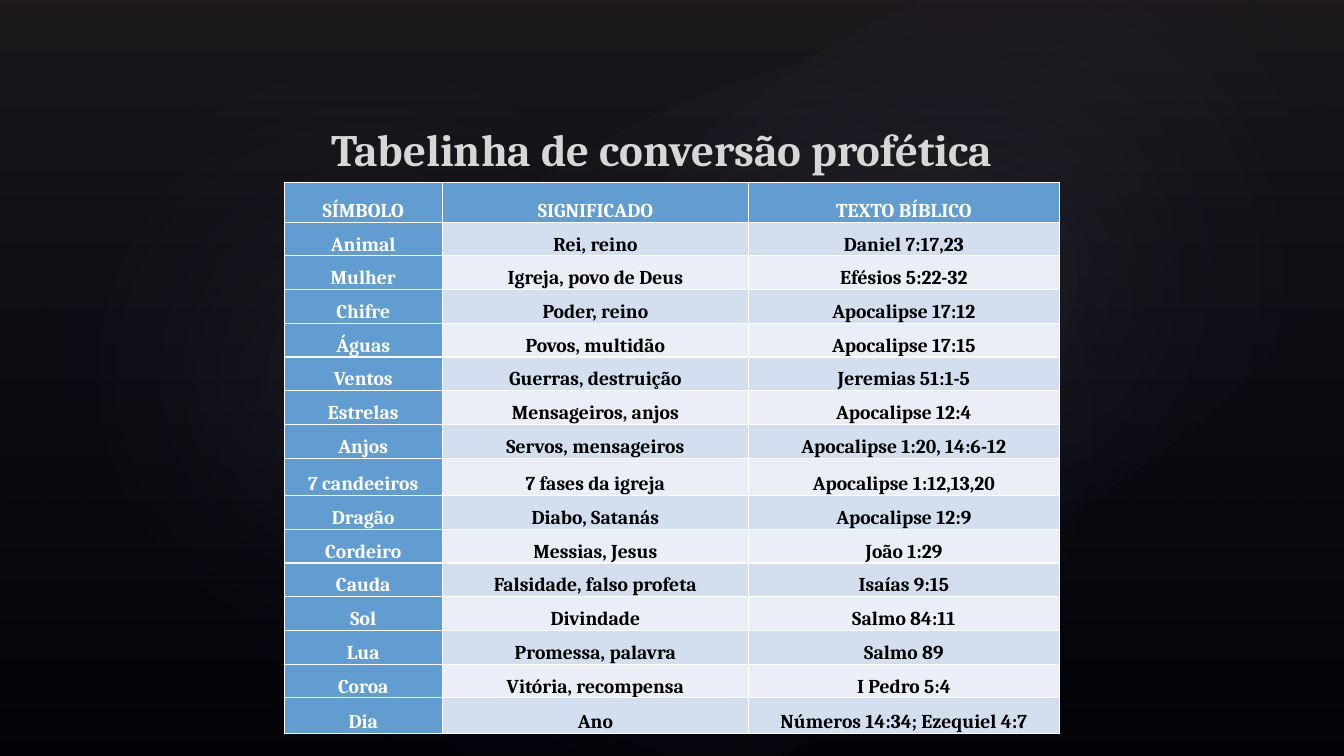
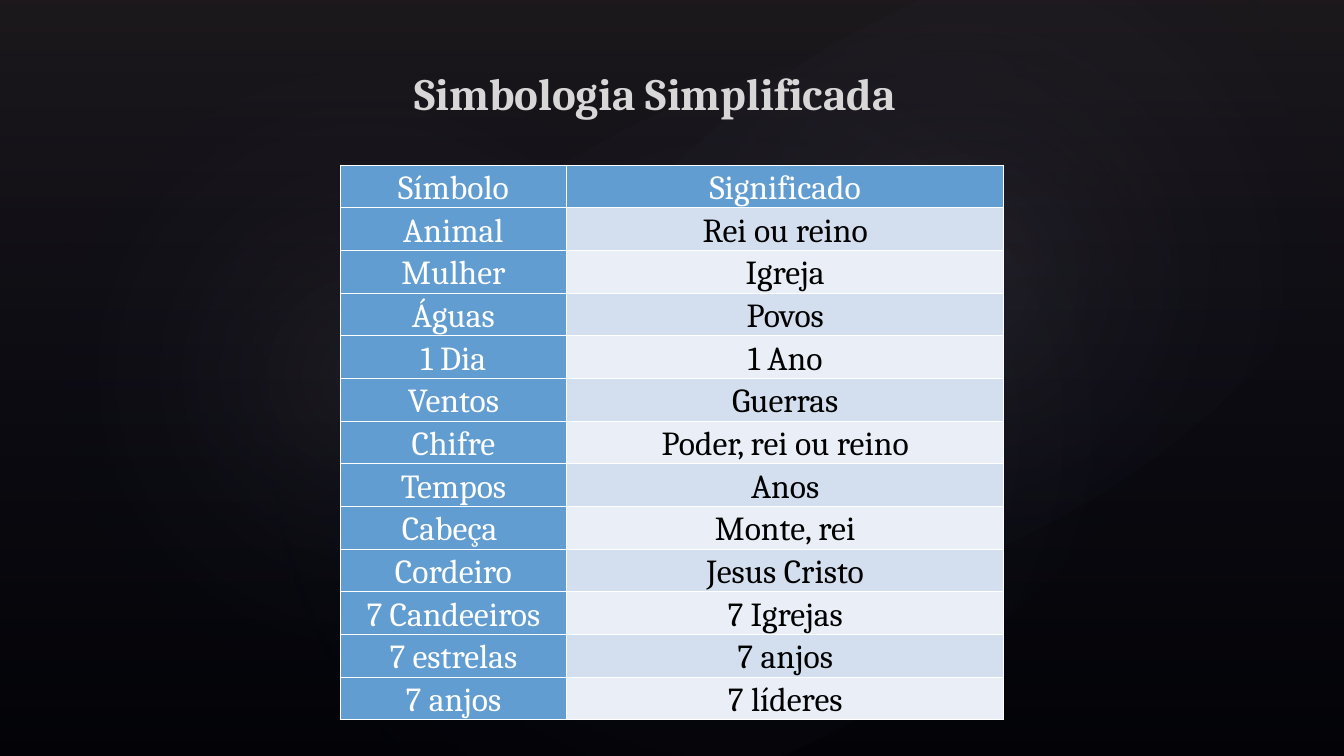
"""Build two dark slides with tables of prophetic symbols."""
from pptx import Presentation
from pptx.dml.color import RGBColor
from pptx.enum.shapes import MSO_SHAPE
from pptx.enum.text import MSO_ANCHOR, PP_ALIGN
from pptx.oxml import parse_xml
from pptx.oxml.ns import nsdecls
from pptx.util import Pt

HUES = {
    "back": "000000", "text": "000000", "white": "FFFFFF",
    "head": "629DD1", "odd": "D3DFEE", "even": "EAEFF7",
    "haze": "504652", "navy": "242852", "glow": "C4BCC6",
    "dim": "979797", "pale": "D7D7D7",
}
FONT = "Cambria"
DOWN = '<a:lin ang="5400000" scaled="0"/>'
ROUND = ('<a:path path="circle"><a:fillToRect l="50000" t="50000" '
         'r="50000" b="50000"/></a:path>')


def rgb(name):
    return RGBColor.from_string(HUES[name])


def blend(stops, way):
    marks = "".join(
        f'<a:gs pos="{pos * 1000}"><a:srgbClr val="{HUES[name]}">'
        f'<a:alpha val="{alpha * 1000}"/></a:srgbClr></a:gs>'
        for pos, name, alpha in stops)
    return parse_xml(f'<a:gradFill {nsdecls("a")} rotWithShape="1">'
                     f'<a:gsLst>{marks}</a:gsLst>{way}</a:gradFill>')


deck = Presentation()
deck.slide_width, deck.slide_height = Pt(960), Pt(540)
blank = deck.slide_layouts[6]
for holder in list(blank.placeholders):
    holder.element.getparent().remove(holder.element)
blank.background.fill.solid()
blank.background.fill.fore_color.rgb = rgb("back")

PAGES = [
    {
        "title": "Tabelinha de conversão profética",
        "place": (229.7, 83.5, 500, 68),
        "left": 203, "top": 130.3, "size": 14, "bold": True, "inset": 3.6,
        "cols": [113, 218.7, 222],
        "high": [28.4] + [24.1] * 7 + [26.6] + [24.1] * 6 + [25.5],
        "rows": [
            ("SÍMBOLO", "SIGNIFICADO", "TEXTO BÍBLICO"),
            ("Animal", "Rei, reino", "Daniel 7:17,23"),
            ("Mulher", "Igreja, povo de Deus", "Efésios 5:22-32"),
            ("Chifre", "Poder, reino", "Apocalipse 17:12"),
            ("Águas", "Povos, multidão", "Apocalipse 17:15"),
            ("Ventos", "Guerras, destruição", "Jeremias 51:1-5"),
            ("Estrelas", "Mensageiros, anjos", "Apocalipse 12:4"),
            ("Anjos", "Servos, mensageiros", "Apocalipse 1:20, 14:6-12"),
            ("7 candeeiros", "7 fases da igreja", "Apocalipse 1:12,13,20"),
            ("Dragão", "Diabo, Satanás", "Apocalipse 12:9"),
            ("Cordeiro", "Messias, Jesus", "João 1:29"),
            ("Cauda", "Falsidade, falso profeta", "Isaías 9:15"),
            ("Sol", "Divindade", "Salmo 84:11"),
            ("Lua", "Promessa, palavra", "Salmo 89"),
            ("Coroa", "Vitória, recompensa", "I Pedro 5:4"),
            ("Dia", "Ano", "Números 14:34; Ezequiel 4:7"),
        ],
    },
    {
        "title": "Simbologia Simplificada",
        "place": (288.7, 43.2, 383, 46),
        "left": 243, "top": 118, "size": 24, "bold": False, "inset": 2.9,
        "cols": [161.7, 312.3],
        "high": [30.5] * 13,
        "rows": [
            ("Símbolo", "Significado"),
            ("Animal", "Rei ou reino"),
            ("Mulher", "Igreja"),
            ("Águas", "Povos"),
            ("1 Dia", "1 Ano"),
            ("Ventos", "Guerras"),
            ("Chifre", "Poder, rei ou reino"),
            ("Tempos", "Anos"),
            ("Cabeça ", "Monte, rei"),
            ("Cordeiro", "Jesus Cristo"),
            ("7 Candeeiros", "7 Igrejas"),
            ("7 estrelas", "7 anjos"),
            ("7 anjos", "7 líderes"),
        ],
    },
]
slides = [deck.slides.add_slide(blank) for page in PAGES]

RECT, OVAL = MSO_SHAPE.RECTANGLE, MSO_SHAPE.OVAL
LIGHTS = [
    (RECT, (0, 0, 960, 540), 0, [(0, "haze", 36), (100, "navy", 10)], DOWN),
    (OVAL, (144, 82, 760, 449), 328.7,
     [(0, "glow", 7), (58, "navy", 0)], ROUND),
    (OVAL, (44, 33, 436, 470), 294.3,
     [(0, "glow", 8), (58, "navy", 0)], ROUND),
    (OVAL, (344, 9.4, 680, 374), 328.7,
     [(0, "glow", 8), (58, "navy", 0)], ROUND),
]
lights = []
for kind, place, turn, stops, way in LIGHTS:
    light = slides[0].shapes.add_shape(kind, *map(Pt, place))
    light.rotation = turn
    light.shadow.inherit = False
    light.line.fill.background()
    geom = light.element.xpath("p:spPr/a:prstGeom")[0]
    geom.addnext(blend(stops, way))
    lights.append(light)
for light in lights:
    blank.shapes.element.append(light.element)

for slide, page in zip(slides, PAGES):
    rows, cols = page["rows"], page["cols"]
    frame = slide.shapes.add_table(
        len(rows), len(cols), Pt(page["left"]), Pt(page["top"]),
        Pt(sum(cols)), Pt(sum(page["high"])))
    table = frame.table
    for col, width in zip(table.columns, cols):
        col.width = Pt(width)
    for y, texts in enumerate(rows):
        table.rows[y].height = Pt(page["high"][y])
        for x, text in enumerate(texts):
            cell = table.cell(y, x)
            head = x == 0 or y == 0
            cell.fill.solid()
            cell.fill.fore_color.rgb = rgb(
                "head" if head else "odd" if y % 2 else "even")
            cell.vertical_anchor = MSO_ANCHOR.BOTTOM
            cell.margin_left = cell.margin_right = Pt(page["inset"])
            cell.margin_top = cell.margin_bottom = 0
            para = cell.text_frame.paragraphs[0]
            para.alignment = PP_ALIGN.CENTER
            run = para.add_run()
            run.text = text
            run.font.name, run.font.size = FONT, Pt(page["size"])
            run.font.bold = page["bold"]
            run.font.color.rgb = rgb("white" if head else "text")
    for props in frame.element.xpath(".//a:tcPr"):
        for spot, side in enumerate("LRTB"):
            props.insert(spot, parse_xml(
                f'<a:ln{side} {nsdecls("a")} w="12700"><a:solidFill>'
                f'<a:srgbClr val="{HUES["white"]}"/></a:solidFill>'
                f'</a:ln{side}>'))

    title = slide.shapes.add_textbox(*map(Pt, page["place"]))
    title.text_frame.word_wrap = True
    run = title.text_frame.paragraphs[0].add_run()
    run.text = page["title"]
    run.font.name, run.font.size, run.font.bold = FONT, Pt(32), True
    title.element.xpath(".//a:rPr")[0].insert(0, blend(
        [(0, "dim", 100), (26, "pale", 100), (100, "white", 100)], DOWN))

deck.save("out.pptx")
